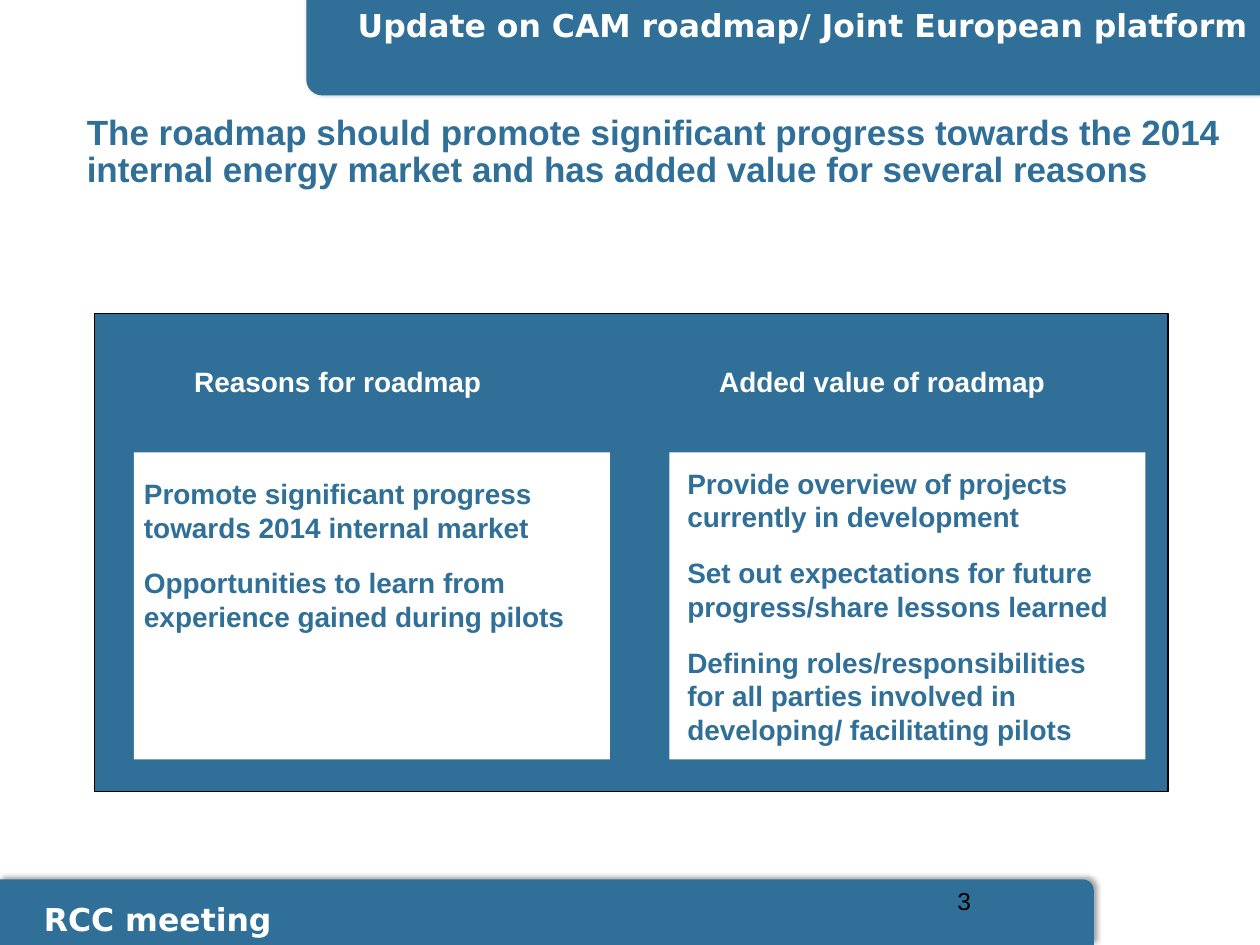
from lxml import etree
from pptx import Presentation
from pptx.dml.color import RGBColor
from pptx.enum.shapes import MSO_SHAPE
from pptx.enum.text import MSO_ANCHOR, PP_ALIGN
from pptx.oxml import parse_xml
from pptx.oxml.ns import nsdecls, qn
from pptx.util import Pt

RECTANGLE = MSO_SHAPE.RECTANGLE
ROUND_ONE = MSO_SHAPE.ROUND_1_RECTANGLE
TOP, MIDDLE = MSO_ANCHOR.TOP, MSO_ANCHOR.MIDDLE
LEFT, RIGHT = PP_ALIGN.LEFT, PP_ALIGN.RIGHT

BLUE, WHITE, BLACK = "307098", "FFFFFF", "000000"
SANS, BANNER_FONT = "Arial", "DejaVu Sans"
INSETS = (7.2, 3.6)


def color(value):
    return RGBColor.from_string(value)


def add_block(page, box, fill, kind=RECTANGLE, outline=None):
    shape = page.shapes.add_shape(kind, *map(Pt, box))
    shape.shadow.inherit = False
    shape.fill.solid()
    shape.fill.fore_color.rgb = color(fill)
    if outline:
        shape.line.color.rgb = color(outline)
        shape.line.width = Pt(0.75)
    else:
        shape.line.fill.background()
    return shape


def add_text(page, box, paragraphs, size, ink, font=SANS, bold=True, align=LEFT,
             anchor=TOP, insets=(0, 0), gap=0, line_spacing=None):
    frame = page.shapes.add_textbox(*map(Pt, box)).text_frame
    frame.word_wrap = True
    frame.vertical_anchor = anchor
    frame.margin_left = frame.margin_right = Pt(insets[0])
    frame.margin_top = frame.margin_bottom = Pt(insets[1])
    for index, text in enumerate(paragraphs):
        para = frame.add_paragraph() if index else frame.paragraphs[0]
        para.text = text
        para.alignment = align
        if index:
            para.space_before = Pt(gap)
        if line_spacing:
            para.line_spacing = line_spacing
        para.font.name = font
        para.font.size = Pt(size)
        para.font.bold = bold
        para.font.color.rgb = color(ink)


def add_banner(page, box, text, text_box, align=LEFT, rotation=0):
    shape = add_block(page, box, BLUE, ROUND_ONE)
    shape.rotation = rotation
    effects = shape._element.spPr.find(qn("a:effectLst"))
    shadow = parse_xml(
        f'<a:outerShdw {nsdecls("a")} blurRad="{Pt(3.1)}" dist="{Pt(1.8)}" dir="18360000"/>')
    tint = etree.SubElement(shadow, qn("a:srgbClr"), val=BLACK)
    etree.SubElement(tint, qn("a:alpha"), val="35000")
    effects.append(shadow)
    add_text(page, text_box, [text], 18, WHITE, BANNER_FONT, align=align, insets=INSETS)


def add_column(page, box, heading, heading_indent, points, text_indent, text_drop, gap):
    left, top, width, height = box
    add_block(page, box, WHITE)
    add_text(page, (left + heading_indent, top - 50, 221, 22), [heading], 16, WHITE)
    add_text(page, (left + text_indent, top + text_drop, 250, height - text_drop - 5),
             points, 16, BLUE, gap=gap)


def add_panel(page, box):
    left, top, width, height = box
    add_block(page, box, BLUE, outline=BLACK)
    columns = [
        ("Reasons for roadmap", 34.5,
         ["Promote significant progress towards 2014 internal market",
          "Opportunities to learn from experience gained during pilots"], 5.75, 14, 12.5),
        ("Added value of roadmap", 28.5,
         ["Provide overview of projects currently in development",
          "Set out expectations for future progress/share lessons learned",
          "Defining roles/responsibilities for all parties involved in "
          "developing/ facilitating pilots"], 10.25, 8, 12.75),
    ]
    for index, column in enumerate(columns):
        add_column(page, (left + 22.5 + index * 306, top + 79.5, 272, 175.5), *column)


def main():
    deck = Presentation()
    deck.slide_width, deck.slide_height = Pt(720), Pt(540)
    page = deck.slides.add_slide(deck.slide_layouts[6])
    add_banner(page, (0, 502.5, 625, 37.5), "RCC meeting", (18, 511, 296, 29))
    add_banner(page, (175, 0, 545, 54.5), "Update on CAM roadmap/ Joint European platform",
               (160, 0, 560, 29), RIGHT, 180)
    add_text(page, (42.5, 57, 666, 60.5),
             ["The roadmap should promote significant progress towards the 2014 "
              "internal energy market and has added value for several reasons"],
             20, BLUE, anchor=MIDDLE, insets=INSETS, line_spacing=0.9)
    add_text(page, (540, 502.5, 168, 37.5), ["3"], 14, BLACK, bold=False, insets=INSETS)
    add_panel(page, (54, 179, 613.5, 273.5))
    deck.save("out.pptx")


if __name__ == "__main__":
    main()
